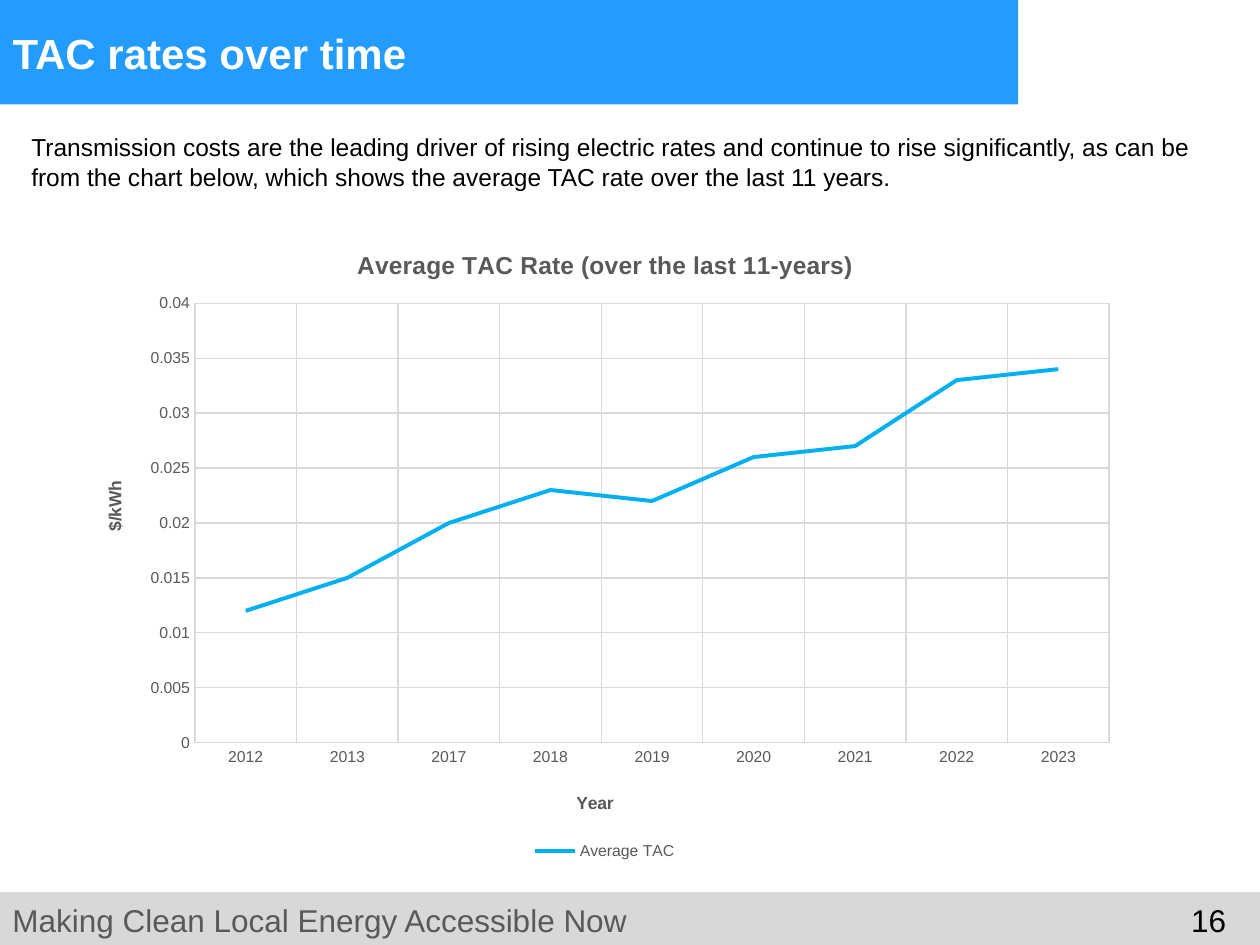
"""Build the slide on TAC rates over time, with its line chart."""
from pptx import Presentation
from pptx.chart.data import CategoryChartData
from pptx.dml.color import RGBColor
from pptx.enum.chart import XL_CHART_TYPE, XL_LEGEND_POSITION, XL_MARKER_STYLE, XL_TICK_MARK
from pptx.enum.shapes import MSO_SHAPE
from pptx.enum.text import MSO_ANCHOR, MSO_AUTO_SIZE, PP_ALIGN
from pptx.oxml.ns import qn
from pptx.oxml.xmlchemy import OxmlElement
from pptx.util import Inches, Pt
from collections import namedtuple

Theme = namedtuple("Theme", "blue band line grid grey black white face head foot body label tick")
theme = Theme(*map(RGBColor.from_string, ("249CFF", "D8D8D8", "00B0F0", "D9D9D9", "595959", "000000", "FFFFFF")),
              "Arial", *map(Pt, (24, 18, 14, 10, 9)))


def style(font, size, color, bold=False):
    font.name, font.size, font.bold = theme.face, size, bold
    font.color.rgb = color


def place(node, **marks):
    layout = node.find(qn("c:layout"))
    if layout is None:
        layout = OxmlElement("c:layout")
        node.insert(0, layout)
    manual = OxmlElement("c:manualLayout")
    layout.append(manual)
    for tag, val in marks.items():
        mark = OxmlElement(f"c:{tag}")
        mark.set("val", str(val))
        manual.append(mark)


deck = Presentation()
deck.slide_width, deck.slide_height = Inches(10), Inches(7.5)
col, row = deck.slide_width / 100, deck.slide_height / 75
slide = deck.slides.add_slide(deck.slide_layouts[5])
shapes = slide.shapes
title = shapes.title

for x, y, w, h, fill in ((0, 70.8, 100, 4.2, theme.band), (0, 0, 80.8, 8.3, theme.blue)):
    band = shapes.add_shape(MSO_SHAPE.RECTANGLE, int(x * col), int(y * row), int(w * col), int(h * row))
    band.shadow.inherit = False
    band.fill.solid()
    band.fill.fore_color.rgb = fill
    band.line.fill.background()
    title._element.addprevious(band._element)

title.left, title.top, title.width, title.height = 0, 0, int(80 * col), int(8.3 * row)
frame = title.text_frame
frame.text = "TAC rates over time"
frame.auto_size = MSO_AUTO_SIZE.NONE
frame.vertical_anchor = MSO_ANCHOR.MIDDLE
frame.paragraphs[0].alignment = PP_ALIGN.LEFT
style(frame.paragraphs[0].font, theme.head, theme.white, True)

intro = ("Transmission costs are the leading driver of rising electric rates and continue to rise significantly, as can be\n"
         "from the chart below, which shows the average TAC rate over the last 11 years.")
texts = (
    (91.1, 71, 7.2, 4, "16", theme.foot, theme.black, PP_ALIGN.RIGHT, True),
    (0, 71, 91.1, 4, "Making Clean Local Energy Accessible Now", theme.foot, theme.grey, PP_ALIGN.LEFT, True),
    (1.5, 10, 94.6, 5.7, intro, theme.body, theme.black, PP_ALIGN.LEFT, False),
)
for x, y, w, h, words, size, color, align, wrap in texts:
    frame = shapes.add_textbox(int(x * col), int(y * row), int(w * col), int(h * row)).text_frame
    frame.word_wrap = wrap
    frame.text = words
    for para in frame.paragraphs:
        para.alignment = align
        style(para.font, size, color)

data = CategoryChartData()
data.categories = ["2012", "2013", "2017", "2018", "2019", "2020", "2021", "2022", "2023"]
data.add_series("Average TAC", (0.012, 0.015, 0.02, 0.023, 0.022, 0.026, 0.027, 0.033, 0.034))
chart = shapes.add_chart(XL_CHART_TYPE.LINE, int(6.3 * col), int(17.4 * row),
                         int(83.4 * col), int(51.3 * row), data).chart
style(chart.font, theme.label, theme.black)
chart.plots[0].vary_by_categories = False
place(chart._chartSpace.chart.plotArea, layoutTarget="inner", xMode="edge", yMode="edge",
      x=0.11, y=0.13, w=0.87, h=0.68)

years, rates = chart.category_axis, chart.value_axis
titles = (
    (chart.chart_title, "Average TAC Rate (over the last 11-years)", theme.body, 0.26, 0.04),
    (years.axis_title, "Year", theme.label, 0.47, 0.88),
    (rates.axis_title, "$/kWh", theme.label, 0.02, 0.4),
)
for head, words, size, x, y in titles:
    head.text_frame.text = words
    style(head.text_frame.paragraphs[0].font, size, theme.grey, True)
    place(head._element, xMode="edge", yMode="edge", x=x, y=y)

for axis in (years, rates):
    axis.major_tick_mark = axis.minor_tick_mark = XL_TICK_MARK.NONE
    axis.has_major_gridlines = True
    style(axis.tick_labels.font, theme.tick, theme.grey)
    for line in (axis.major_gridlines.format.line, axis.format.line):
        line.color.rgb = theme.grid
        line.width = Pt(0.75)
rates.format.line.fill.background()
rates.minimum_scale, rates.maximum_scale, rates.major_unit = 0, 0.04, 0.005
rates.tick_labels.number_format = "General"
rates.tick_labels.number_format_is_linked = False

chart.has_legend = True
chart.legend.position = XL_LEGEND_POSITION.BOTTOM
chart.legend.include_in_layout = False
style(chart.legend.font, theme.tick, theme.grey)

trend = chart.plots[0].series[0]
trend.smooth = False
trend.marker.style = XL_MARKER_STYLE.NONE
trend.format.line.color.rgb = theme.line
trend.format.line.width = Pt(2.25)

deck.save("out.pptx")
